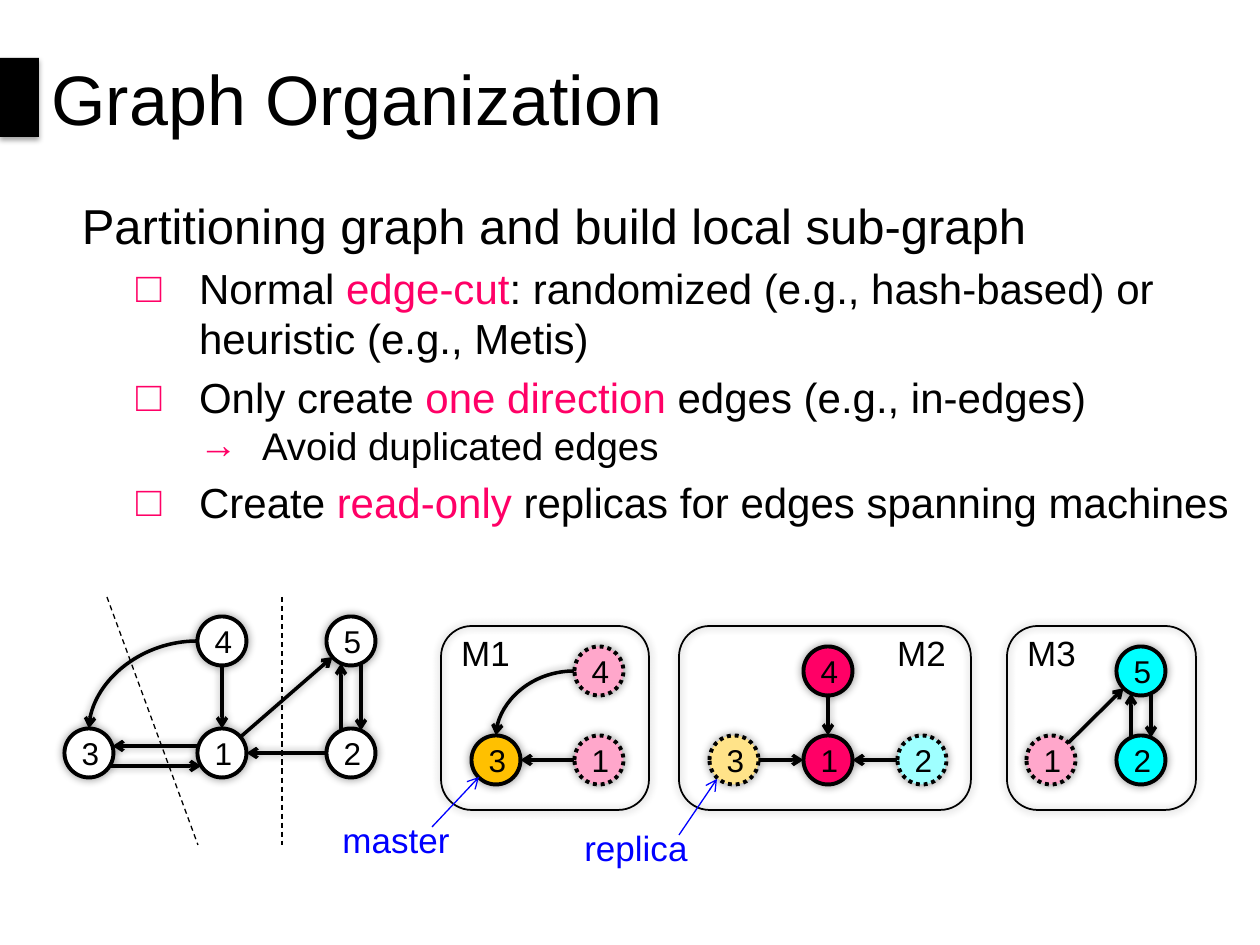
from math import hypot, sqrt

from lxml import etree
from pptx import Presentation
from pptx.dml.color import RGBColor
from pptx.enum.dml import MSO_LINE
from pptx.enum.shapes import MSO_CONNECTOR, MSO_SHAPE
from pptx.enum.text import MSO_ANCHOR, MSO_AUTO_SIZE, PP_ALIGN
from pptx.oxml.ns import qn
from pptx.util import Inches, Pt

STRAIGHT, CURVE = MSO_CONNECTOR.STRAIGHT, MSO_CONNECTOR.CURVE
OVAL, RECT, ROUND = MSO_SHAPE.OVAL, MSO_SHAPE.RECTANGLE, MSO_SHAPE.ROUNDED_RECTANGLE
DASH, DOT = MSO_LINE.DASH, MSO_LINE.ROUND_DOT
LEFT, CENTER = PP_ALIGN.LEFT, PP_ALIGN.CENTER
MIDDLE, NO_FIT = MSO_ANCHOR.MIDDLE, MSO_AUTO_SIZE.NONE

FONT = "Arial"
EMU = 914400 / 126
COLORS = {"black": "000000", "white": "FFFFFF", "pink": "FF0066", "pale pink": "FFA7CB",
          "gold": "FFC000", "pale gold": "FFE389", "cyan": "00FFFF",
          "pale cyan": "9FFFFF", "blue": "0000FF"}

# Content
TITLE = "Graph Organization"
# level, runs; every second run is highlighted
BODY = [
    (0, ["Partitioning graph and build local sub-graph"]),
    (1, ["Normal ", "edge-cut", ": randomized (e.g., hash-based) or heuristic (e.g., Metis)"]),
    (1, ["Only create ", "one direction ", "edges (e.g., in-edges)"]),
    (2, ["Avoid duplicated edges"]),
    (1, ["Create ", "read-only", " replicas for edges spanning machines"]),
]
# level: size, left margin and hanging indent in inches, bullet
LEVELS = {0: (28, 0.3, 0.25, None), 1: (24, 0.98, 0.5, "□"), 2: (22, 1.48, 0.5, "→")}

# nodes: name -> centre x, centre y, colour; pale colours are replicas
# edges: source, target, sideways shift (dx, dy); curves: source, target
GRAPHS = [
    {"nodes": {"4": (222, 641, "white"), "5": (351, 641, "white"), "3": (89, 753, "white"),
               "1": (222, 753, "white"), "2": (351, 753, "white")},
     "edges": [("1", "5", 0, 0), ("2", "1", 0, 0), ("4", "1", 0, 0), ("1", "3", 0, -7),
               ("3", "1", 0, 13), ("2", "5", -10, 0), ("5", "2", 10, 0)],
     "curves": [("4", "3")]},
    {"nodes": {"4": (599, 671, "pale pink"), "3": (496, 760, "gold"),
               "1": (599, 760, "pale pink")},
     "edges": [("1", "3", 0, 0)],
     "curves": [("4", "3")]},
    {"nodes": {"4": (828, 671, "pink"), "3": (734, 760, "pale gold"),
               "1": (828, 760, "pink"), "2": (922, 760, "pale cyan")},
     "edges": [("2", "1", 0, 0), ("4", "1", 0, 0), ("3", "1", 0, 0)],
     "curves": []},
    {"nodes": {"5": (1141, 671, "cyan"), "1": (1051, 760, "pale pink"),
               "2": (1141, 760, "cyan")},
     "edges": [("1", "5", 0, 0), ("2", "5", -10, 0), ("5", "2", 10, 0)],
     "curves": []},
]
NODE = 49
RADIUS = NODE / 2
# machine name, box left, box width, label left
MACHINES = [("M1", 441, 208, 451), ("M2", 679, 292, 887), ("M3", 1007, 189, 1017)]
CUTS = [(107, 597, 198, 845), (282, 597, 282, 845)]
CALLOUTS = [("master", 341, 827, (432, 827, 479, 777)),
            ("replica", 581, 835, (679, 835, 717, 779))]


def rgb(name):
    return RGBColor.from_string(COLORS[name])


def px(*values):
    return [round(v * EMU) for v in values]


def set_effects(s, blur=None, dist=0, angle=0, alpha=0):
    """Replace inherited effects by one soft shadow, or by none."""
    effects = etree.SubElement(s._element.spPr, qn("a:effectLst"))
    if blur is not None:
        shadow = etree.SubElement(effects, qn("a:outerShdw"), blurRad=str(Pt(blur)),
                                  dist=str(Pt(dist)), dir=str(angle * 60000),
                                  rotWithShape="0")
        color = etree.SubElement(shadow, qn("a:srgbClr"), val=COLORS["black"])
        etree.SubElement(color, qn("a:alpha"), val=str(alpha * 1000))


def style_run(r, size, color="black"):
    r.font.name, r.font.size = FONT, Pt(size)
    r.font.color.rgb = rgb(color)


def add_line(ends, color="black", width=2, kind=STRAIGHT, arrow=True, dash=None, shadow=True):
    c = slide.shapes.add_connector(kind, *px(*ends))
    c.line.color.rgb, c.line.width = rgb(color), Pt(width)
    if dash:
        c.line.dash_style = dash
    if arrow:
        etree.SubElement(c.line._get_or_add_ln(), qn("a:tailEnd"), type="arrow")
    if kind == CURVE:
        c._element.spPr.find(qn("a:prstGeom")).set("prst", "curvedConnector2")
    if shadow:
        set_effects(c, 5, alpha=40)
    else:
        set_effects(c)


def add_label(text, x, y, width, color="black"):
    tf = slide.shapes.add_textbox(*px(x, y, width, 34)).text_frame
    tf.word_wrap = True
    tf.margin_left = tf.margin_right = tf.margin_top = tf.margin_bottom = 0
    tf.text = text
    p = tf.paragraphs[0]
    p.alignment, p.line_spacing = CENTER, 0.8
    style_run(p.runs[0], 20, color)


def add_node(name, x, y, color):
    s = slide.shapes.add_shape(OVAL, *px(x - RADIUS, y - RADIUS, NODE, NODE))
    s.fill.solid()
    s.fill.fore_color.rgb = rgb(color)
    s.line.color.rgb, s.line.width = rgb("black"), Pt(2.25)
    if color.startswith("pale"):
        s.line.dash_style = DOT
    set_effects(s, 5, alpha=40)
    tf = s.text_frame
    tf.text, tf.vertical_anchor = name, MIDDLE
    tf.margin_left = tf.margin_right = Inches(0.08)
    tf.margin_top = tf.margin_bottom = Inches(0.04)
    tf.paragraphs[0].alignment = CENTER
    style_run(tf.paragraphs[0].runs[0], 18)


def edge_ends(a, b, dx, dy):
    """Run from rim to rim of two nodes, shifted sideways."""
    vx, vy = b[0] - a[0], b[1] - a[1]
    length = hypot(vx, vy)
    reach = sqrt(RADIUS ** 2 - dx ** 2 - dy ** 2) / length
    return (a[0] + dx + vx * reach, a[1] + dy + vy * reach,
            b[0] + dx - vx * reach, b[1] + dy - vy * reach)


prs = Presentation()
prs.slide_width, prs.slide_height = px(1260, 945)
slide = prs.slides.add_slide(prs.slide_layouts[1])

# Title and its marker
title, body = slide.shapes.title, slide.placeholders[1]
title.left, title.top, title.width, title.height = px(39, 0, 1221, 195)
tf = title.text_frame
tf.text, tf.vertical_anchor, tf.auto_size = TITLE, MIDDLE, NO_FIT
tf.paragraphs[0].alignment = LEFT
style_run(tf.paragraphs[0].runs[0], 40)

marker = slide.shapes.add_shape(RECT, *px(0, 58, 39, 79))
marker.fill.solid()
marker.fill.fore_color.rgb = rgb("black")
marker.line.fill.background()
set_effects(marker, 3.1, 1.8, 90, 35)

# Bulleted text
body.left, body.top, body.width, body.height = px(63, 189, 1182, 388)
tf = body.text_frame
tf.auto_size = NO_FIT
for i, (level, texts) in enumerate(BODY):
    p = tf.add_paragraph() if i else tf.paragraphs[0]
    size, margin, hang, bullet = LEVELS[level]
    p.level = level
    if level == 2:
        p.space_before = Pt(0)
    pPr = p._p.get_or_add_pPr()
    pPr.set("marL", str(Inches(margin)))
    pPr.set("indent", str(-Inches(hang)))
    if bullet:
        color = etree.SubElement(pPr, qn("a:buClr"))
        etree.SubElement(color, qn("a:srgbClr"), val=COLORS["pink"])
        etree.SubElement(pPr, qn("a:buFont"), typeface=FONT)
        etree.SubElement(pPr, qn("a:buChar"), char=bullet)
    else:
        etree.SubElement(pPr, qn("a:buNone"))
    for j, text in enumerate(texts):
        r = p.add_run()
        r.text = text
        style_run(r, size, "pink" if j % 2 else "black")

# Machine boxes
for name, x, width, label_x in MACHINES:
    box = slide.shapes.add_shape(ROUND, *px(x, 626, width, 184))
    box.fill.background()
    box.line.color.rgb, box.line.width = rgb("black"), Pt(1)
    set_effects(box, 5, alpha=40)
    add_label(name, label_x, 640, 69)

# Whole graph and the sub-graph of each machine
for graph in GRAPHS:
    nodes = graph["nodes"]
    for a, b, dx, dy in graph["edges"]:
        add_line(edge_ends(nodes[a], nodes[b], dx, dy))
    for a, b in graph["curves"]:
        (ax, ay, _), (bx, by, _) = nodes[a], nodes[b]
        add_line((ax - RADIUS, ay, bx, by - RADIUS), kind=CURVE)
    for name, node in nodes.items():
        add_node(name, *node)

# Cut lines and callouts
for cut in CUTS:
    add_line(cut, width=0.75, arrow=False, dash=DASH, shadow=False)
for text, x, y, pointer in CALLOUTS:
    add_line(pointer, "blue", 0.75, shadow=False)
    add_label(text, x, y, 110, "blue")

prs.save("out.pptx")
